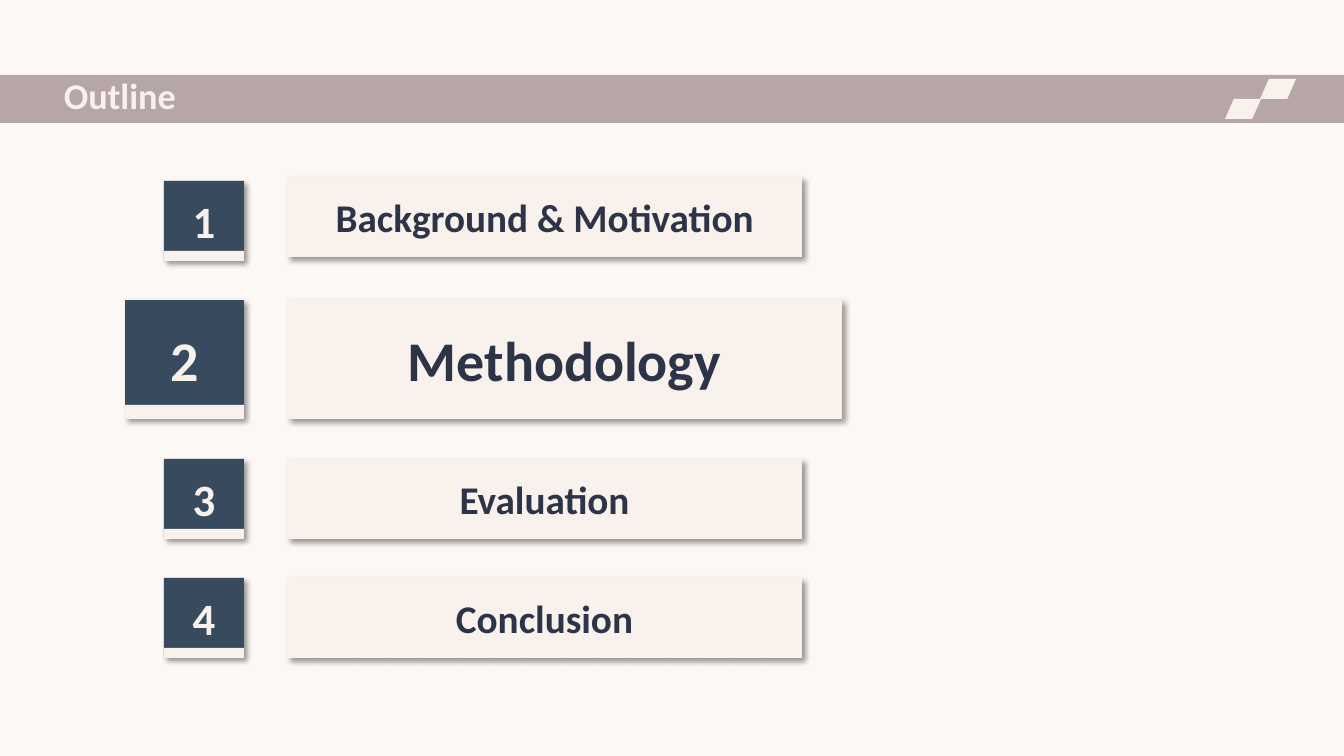
from lxml import etree
from pptx import Presentation
from pptx import util as u
from pptx.dml.color import RGBColor
from pptx.enum import shapes, text
from pptx.oxml import ns

PAPER = RGBColor(0xFC, 0xF8, 0xF5)
MAUVE = RGBColor(0xB6, 0xA6, 0xA8)
CREAM = RGBColor(0xF8, 0xF1, 0xEC)
SLATE = RGBColor(0x38, 0x4B, 0x5E)
NAVY = RGBColor(0x2E, 0x34, 0x48)


class Deck:
    font = "Calibri"
    scale = 914400 / 100.8

    def __init__(self):
        self.prs = Presentation()
        self.prs.slide_width = u.Inches(13.333)
        self.prs.slide_height = u.Inches(7.5)
        self.slide = self.prs.slides.add_slide(self.prs.slide_layouts[6])
        fill = self.slide.background.fill
        fill.solid()
        fill.fore_color.rgb = PAPER

    def px(self, *nums):
        return [u.Emu(round(n * self.scale)) for n in nums]

    def block(self, box, color, home=None, kind=shapes.MSO_SHAPE.RECTANGLE):
        home = home or self.slide
        shape = home.shapes.add_shape(kind, *self.px(*box))
        shape.fill.solid()
        shape.fill.fore_color.rgb = color
        shape.line.fill.background()
        shape.shadow.inherit = False
        return shape

    def slant(self, box):
        shape = self.block(box, CREAM, kind=shapes.MSO_SHAPE.PARALLELOGRAM)
        shape.adjustments[0] = 0.44

    def shade(self, shape):
        root = shape.element.spPr.find(ns.qn("a:effectLst"))
        drop = etree.SubElement(
            root, ns.qn("a:outerShdw"), blurRad=str(u.Pt(4)), dist=str(u.Pt(3)),
            dir="2700000", algn="tl", rotWithShape="0")
        tint = etree.SubElement(drop, ns.qn("a:srgbClr"), val="000000")
        etree.SubElement(tint, ns.qn("a:alpha"), val="40000")

    def label(self, shape, words, size, color, align=text.PP_ALIGN.CENTER):
        frame = shape.text_frame
        frame.word_wrap = True
        frame.vertical_anchor = text.MSO_ANCHOR.MIDDLE
        para = frame.paragraphs[0]
        para.text = words
        para.alignment = align
        para.font.name = self.font
        para.font.size = u.Pt(size)
        para.font.bold = True
        para.font.color.rgb = color
        return para

    def title(self, box, words):
        shape = self.slide.shapes.add_textbox(*self.px(*box))
        para = self.label(shape, words, 25.9, CREAM, text.PP_ALIGN.LEFT)
        para.line_spacing = 0.8

    def badge(self, right, top, side, words, size):
        left = right - side
        strip = side // 8
        group = self.slide.shapes.add_group_shape()
        tile = self.block((left, top, side, side), SLATE, group)
        self.shade(tile)
        self.label(tile, words, size, CREAM)
        self.block((left, top + side - strip, side, strip), CREAM, group)

    def card(self, box, words, size):
        shape = self.block(box, CREAM)
        self.shade(shape)
        self.label(shape, words, size, NAVY)


def main():
    deck = Deck()
    deck.block((0, 75, 1344, 48), MAUVE)
    deck.slant((1260, 79, 36, 20))
    deck.slant((1225, 99, 36, 20))
    deck.title((54, 75, 1171, 48), "Outline")

    small = dict(side=80, width=515, num=32, size=28)
    large = dict(side=119, width=555, num=40, size=40)
    rows = [
        ("Background & Motivation", 181, 177, small),
        ("Methodology", 300, 300, large),
        ("Evaluation", 459, 459, small),
        ("Conclusion", 578, 578, small),
    ]
    for i, (words, top, edge, look) in enumerate(rows, 1):
        deck.badge(244, top, look["side"], str(i), look["num"])
        deck.card((287, edge, look["width"], look["side"]), words, look["size"])

    deck.prs.save("out.pptx")


if __name__ == "__main__":
    main()
